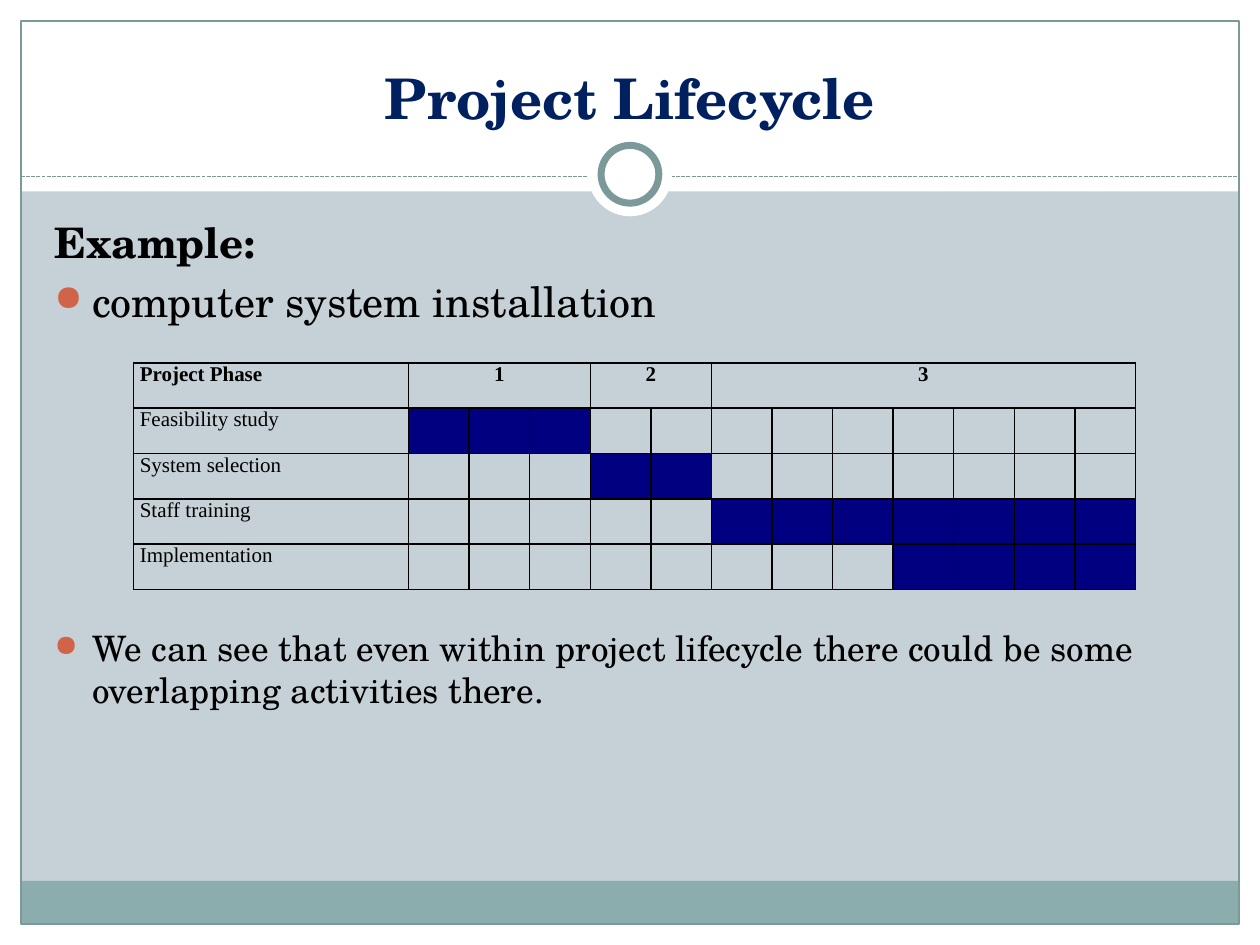
from dataclasses import dataclass
from typing import Optional

import pptx
import pptx.dml.color
import pptx.enum.dml
import pptx.enum.shapes
import pptx.enum.text
import pptx.oxml.ns
import pptx.util
from lxml import etree

# The slide is a grid of 120 columns by 90 rows, with square units.
COLUMNS, ROWS = 120, 90
WIDTH, HEIGHT = pptx.util.Inches(10), pptx.util.Inches(7.5)
MARGIN = 2
CENTER = pptx.enum.text.PP_ALIGN.CENTER
SHAPES = pptx.enum.shapes.MSO_SHAPE
SERIF, TABLE_FONT = "TeX Gyre Schola", "Times New Roman"
WHITE, BLACK, TEAL, NAVY = "FFFFFF", "000000", "7C999A", "000080"


@dataclass
class Panel:
    left: float
    top: float
    width: float
    height: float
    fill: Optional[str] = WHITE
    line_width: float = 0
    kind: int = SHAPES.RECTANGLE


@dataclass
class Line:
    text: str
    size: float
    bold: bool = False
    color: str = BLACK
    space_before: float = 0
    bullet: bool = False
    centered: bool = False


@dataclass
class Span:
    """A label over a run of period columns, counted from 1."""
    label: str
    first: int
    last: int


PANELS = [
    Panel(0, 88, COLUMNS, MARGIN),
    Panel(0, 0, COLUMNS, 18.24),
    Panel(0, 0, MARGIN, ROWS),
    Panel(COLUMNS - MARGIN, 0, MARGIN, ROWS),
    Panel(MARGIN, 83.9, 116, 4.1, "8CADAE"),
    Panel(MARGIN, MARGIN, 116, 86, None, 0.75),
]
RINGS = [
    Panel(56, 12.6, 8, 8, kind=SHAPES.OVAL),
    Panel(57.25, 13.85, 5.5, 5.5, line_width=4, kind=SHAPES.OVAL),
]
TITLE = [Line("Project Lifecycle", 32, True, "002060", centered=True)]
BODY = [
    Line("Example:", 24, True, space_before=5),
    Line("computer system installation", 24, space_before=5, bullet=True),
    Line("We can see that even within project lifecycle there could be some "
         "overlapping activities there.", 20, space_before=172, bullet=True),
]
PERIODS = [Span("1", 1, 3), Span("2", 4, 5), Span("3", 6, 12)]
PHASES = [
    Span("Feasibility study", 1, 3),
    Span("System selection", 4, 5),
    Span("Staff training", 6, 12),
    Span("Implementation", 9, 12),
]


def across(columns: float) -> int:
    return round(WIDTH * columns / COLUMNS)


def down(rows: float) -> int:
    return round(HEIGHT * rows / ROWS)


def rgb(color: str) -> pptx.dml.color.RGBColor:
    return pptx.dml.color.RGBColor.from_string(color)


def add_element(parent, tag: str, **attributes: str):
    element = etree.SubElement(parent, pptx.oxml.ns.qn(tag))
    for name, value in attributes.items():
        element.set(name, value)
    return element


def paint(fill, color: Optional[str]) -> None:
    if color is None:
        fill.background()
    else:
        fill.solid()
        fill.fore_color.rgb = rgb(color)


def add_panel(slide, panel: Panel) -> None:
    shape = slide.shapes.add_shape(
        panel.kind, across(panel.left), down(panel.top),
        across(panel.width), down(panel.height))
    shape.shadow.inherit = False
    paint(shape.fill, panel.fill)
    paint(shape.line.fill, TEAL if panel.line_width else None)
    if panel.line_width:
        shape.line.width = pptx.util.Pt(panel.line_width)


def add_divider(slide, row: float) -> None:
    divider = slide.shapes.add_connector(
        pptx.enum.shapes.MSO_CONNECTOR.STRAIGHT,
        across(MARGIN), down(row), across(COLUMNS - MARGIN), down(row))
    divider.line.color.rgb = rgb(TEAL)
    divider.line.width = pptx.util.Pt(0.75)
    divider.line.dash_style = pptx.enum.dml.MSO_LINE.SQUARE_DOT
    add_element(divider.element.spPr, "a:effectLst")


def add_bullet(paragraph) -> None:
    properties = paragraph._p.get_or_add_pPr()
    indent = pptx.util.Inches(0.3)
    properties.set("marL", str(indent))
    properties.set("indent", str(-indent))
    color = add_element(properties, "a:buClr")
    add_element(color, "a:srgbClr", val="D16349")
    add_element(properties, "a:buSzPct", val="85000")
    add_element(properties, "a:buChar", char="●")


def write(paragraph, line: Line, font_name: str) -> None:
    paragraph.text = line.text
    if line.centered:
        paragraph.alignment = CENTER
    paragraph.space_before = pptx.util.Pt(line.space_before)
    if line.bullet:
        add_bullet(paragraph)
    font = paragraph.font
    font.name, font.size, font.bold = font_name, pptx.util.Pt(line.size), line.bold
    font.color.rgb = rgb(line.color)


def add_text(slide, left: float, top: float, width: float, height: float,
             lines: list[Line], anchor) -> None:
    box = slide.shapes.add_textbox(across(left), down(top), across(width), down(height))
    frame = box.text_frame
    frame.word_wrap = True
    frame.vertical_anchor = anchor
    for index, line in enumerate(lines):
        paragraph = frame.add_paragraph() if index else frame.paragraphs[0]
        write(paragraph, line, SERIF)


def format_cell(cell, fill: Optional[str]) -> None:
    cell.margin_left = cell.margin_right = pptx.util.Inches(0.05)
    cell.margin_top = cell.margin_bottom = 0
    cell.text_frame.paragraphs[0].font.size = pptx.util.Pt(12)
    properties = cell._tc.get_or_add_tcPr()
    for side in ("a:lnL", "a:lnR", "a:lnT", "a:lnB"):
        border = add_element(properties, side, w=str(pptx.util.Pt(1)))
        add_element(add_element(border, "a:solidFill"), "a:srgbClr", val=BLACK)
    paint(cell.fill, fill)


def add_gantt(slide) -> None:
    label_width, period_width, row_height = 26.2, 5.77, 4.32
    periods, rows = PERIODS[-1].last, len(PHASES) + 1
    table = slide.shapes.add_table(
        rows, periods + 1, across(12.72), down(34.56),
        across(label_width + periods * period_width), down(rows * row_height)).table
    table.first_row = table.horz_banding = False
    for index, column in enumerate(table.columns):
        column.width = across(period_width if index else label_width)
    for row_index, row in enumerate(table.rows):
        row.height = down(row_height)
        for index, cell in enumerate(row.cells):
            phase = PHASES[row_index - 1] if row_index else None
            active = phase and phase.first <= index <= phase.last
            format_cell(cell, NAVY if active else None)

    def label(row: int, column: int, line: Line) -> None:
        write(table.cell(row, column).text_frame.paragraphs[0], line, TABLE_FONT)

    label(0, 0, Line("Project Phase", 12, True))
    for period in PERIODS:
        table.cell(0, period.first).merge(table.cell(0, period.last))
        label(0, period.first, Line(period.label, 12, True, centered=True))
    for row_index, phase in enumerate(PHASES, 1):
        label(row_index, 0, Line(phase.label, 12))


def main() -> None:
    presentation = pptx.Presentation()
    presentation.slide_width, presentation.slide_height = WIDTH, HEIGHT
    slide = presentation.slides.add_slide(presentation.slide_layouts[6])
    paint(slide.background.fill, "C5D1D7")
    for panel in PANELS:
        add_panel(slide, panel)
    add_divider(slide, 16.8)
    for ring in RINGS:
        add_panel(slide, ring)
    add_text(slide, 4, 3, 112, 10, TITLE, pptx.enum.text.MSO_ANCHOR.BOTTOM)
    add_text(slide, 4, 20, 112.8, 60, BODY, pptx.enum.text.MSO_ANCHOR.TOP)
    add_gantt(slide)
    presentation.save("out.pptx")


if __name__ == "__main__":
    main()
